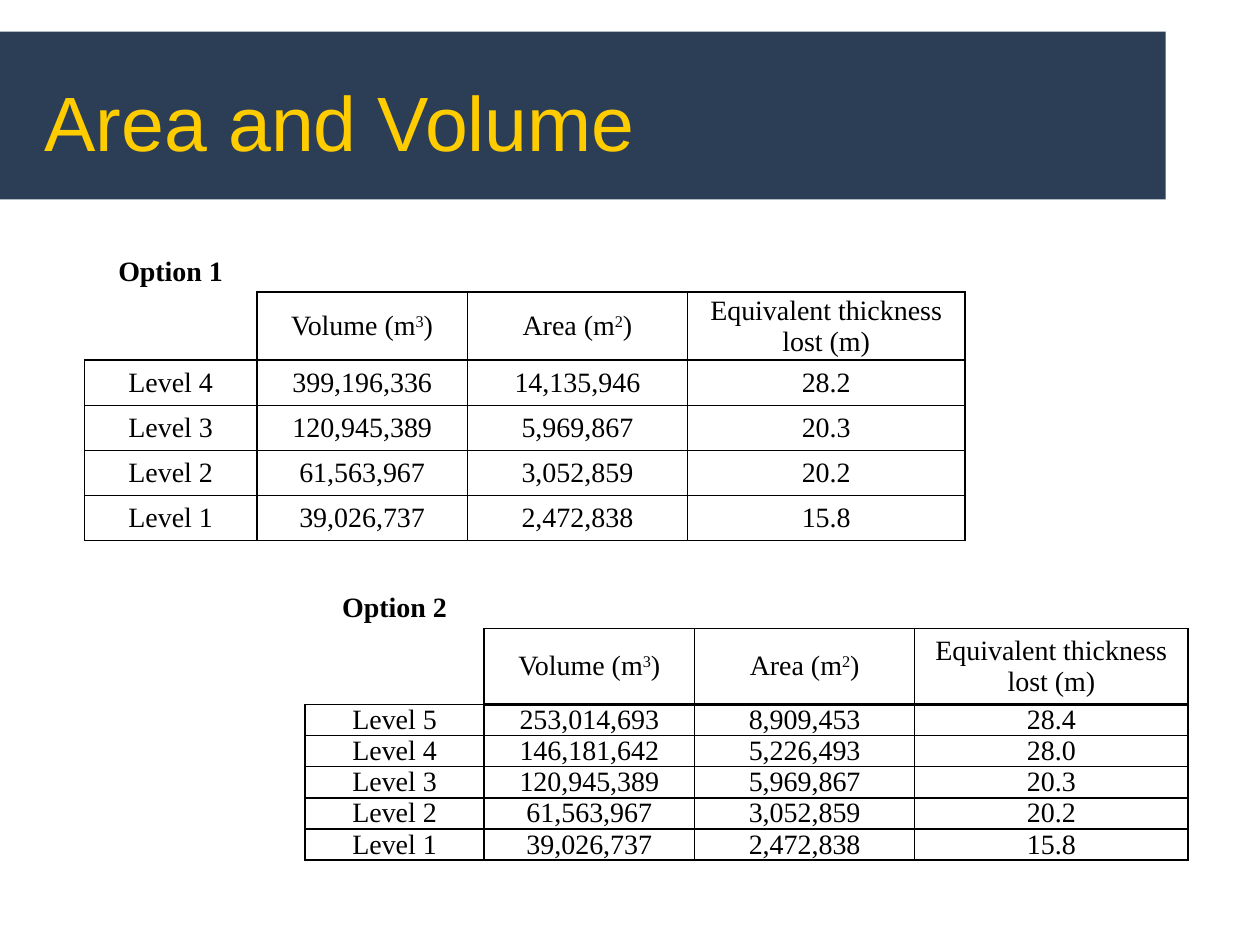
from itertools import accumulate

from lxml import etree
from pptx import Presentation
from pptx.dml.color import RGBColor
from pptx.enum.shapes import MSO_SHAPE
from pptx.enum.text import MSO_ANCHOR, PP_ALIGN
from pptx.oxml.ns import qn
from pptx.util import Cm, Pt

RECTANGLE = MSO_SHAPE.RECTANGLE
MIDDLE = MSO_ANCHOR.MIDDLE
LEFT, CENTER = PP_ALIGN.LEFT, PP_ALIGN.CENTER
TITLE_ONLY = 5

# Text between carets is set as superscript.
HEADERS = ["", "Volume (m^3^)", "Area (m^2^)", "Equivalent thickness lost (m)"]
OPTION_1 = [
    ["Level 4", "399,196,336", "14,135,946", "28.2"],
    ["Level 3", "120,945,389", "5,969,867", "20.3"],
    ["Level 2", "61,563,967", "3,052,859", "20.2"],
    ["Level 1", "39,026,737", "2,472,838", "15.8"],
]
OPTION_2 = [
    ["Level 5", "253,014,693", "8,909,453", "28.4"],
    ["Level 4", "146,181,642", "5,226,493", "28.0"],
] + OPTION_1[1:]


def color(value):
    return RGBColor.from_string(value)


def set_opacity(properties, percent):
    """Make the solid fill directly under a properties element translucent."""
    fill_color = properties.find(qn("a:solidFill"))[0]
    etree.SubElement(fill_color, qn("a:alpha"), val=str(percent * 1000))


class SlideBuilder:
    title_font, table_font = "Arial", "Times New Roman"
    title_size, table_size = Pt(44), Pt(16)
    banner_color, title_color = "0F243E", "FFCC00"
    text_color, cell_color = "000000", "FFFFFF"
    thin, thick = Pt(1), Pt(1.5)

    def __init__(self, presentation):
        self.slide = presentation.slides.add_slide(
            presentation.slide_layouts[TITLE_ONLY])

    def style_font(self, font, name, size, value):
        font.name, font.size = name, size
        font.color.rgb = color(value)

    def banner(self, left, top, width, height):
        shape = self.slide.shapes.add_shape(
            RECTANGLE, Cm(left), Cm(top), Cm(width), Cm(height))
        shape.shadow.inherit = False
        shape.fill.solid()
        shape.fill.fore_color.rgb = color(self.banner_color)
        set_opacity(shape._element.spPr, 88)
        shape.line.fill.background()
        # Behind the title: the first two children are group properties.
        self.slide.shapes._spTree.insert(2, shape._element)

    def title(self, text, left, top, width, height):
        shape = self.slide.shapes.title
        shape.left, shape.top = Cm(left), Cm(top)
        shape.width, shape.height = Cm(width), Cm(height)
        text_frame = shape.text_frame
        text_frame.text = text
        text_frame.vertical_anchor = MIDDLE
        paragraph = text_frame.paragraphs[0]
        paragraph.alignment = LEFT
        self.style_font(paragraph.runs[0].font, self.title_font,
                        self.title_size, self.title_color)

    def cell_text(self, cell, text, bold):
        paragraph = cell.text_frame.paragraphs[0]
        paragraph.alignment = CENTER
        for index, piece in enumerate(text.split("^")):
            if not piece:
                continue
            run = paragraph.add_run()
            run.text = piece
            self.style_font(run.font, self.table_font, self.table_size,
                            self.text_color)
            run.font.bold = bold
            if index % 2:
                run._r.get_or_add_rPr().set("baseline", "30000")

    def borders(self, cell, widths):
        """Draw the sides named in widths and clear the others."""
        properties = cell._tc.get_or_add_tcPr()
        for side in "LRTB":
            line = etree.SubElement(properties, qn(f"a:ln{side}"))
            if side in widths:
                line.set("w", str(widths[side]))
                fill = etree.SubElement(line, qn("a:solidFill"))
                etree.SubElement(fill, qn("a:srgbClr"), val=self.text_color)
            else:
                etree.SubElement(line, qn("a:noFill"))

    def border_widths(self, row, group, label_edge):
        """Label cells have open corners; the rule under the headers is thick."""
        if row == 0:
            return {"B": self.thin} if group else {}
        if row == 1 and group == 0:
            return {"R": self.thin, "B": self.thin}
        widths = dict.fromkeys("LRTB", self.thin)
        if group and row in (1, 2):
            widths["B" if row == 1 else "T"] = self.thick
        if row > 1 and group < 2:
            widths["L" if group else "R"] = label_edge
        return widths

    def table(self, name, values, left, top, columns, heights, top_spans,
              spans, inset, opacity, label_edge):
        rows = [[name] + [""] * (len(top_spans) - 1), HEADERS] + values
        table = self.slide.shapes.add_table(
            len(rows), len(columns), Cm(left), Cm(top),
            Cm(sum(columns)), Cm(sum(heights))).table
        table.first_row = table.horz_banding = False
        for column, width in zip(table.columns, columns):
            column.width = Cm(width)
        for row, height in zip(table.rows, heights):
            row.height = Cm(height)

        for row, texts in enumerate(rows):
            row_spans = spans if row else top_spans
            ends = accumulate(row_spans)
            for group, (text, span, end) in enumerate(
                    zip(texts, row_spans, ends)):
                cells = [table.cell(row, index)
                         for index in range(end - span, end)]
                if span > 1:
                    cells[0].merge(cells[-1])
                self.cell_text(cells[0], text, bold=row == 0)
                widths = self.border_widths(row, group, label_edge)
                for cell in cells:
                    cell.vertical_anchor = MIDDLE
                    cell.margin_left = cell.margin_right = Cm(inset)
                    cell.margin_top = cell.margin_bottom = 0
                    self.borders(cell, widths)
                    cell.fill.solid()
                    cell.fill.fore_color.rgb = color(self.cell_color)
                    set_opacity(cell._tc.tcPr, opacity)


def main():
    presentation = Presentation()
    presentation.slide_width, presentation.slide_height = Cm(25.4), Cm(19.05)
    builder = SlideBuilder(presentation)
    builder.banner(0, 0.64, 23.5, 3.38)
    builder.title("Area and Volume", 0.64, 0.84, 22.86, 3.18)
    builder.table(
        "Option 1", OPTION_1, 1.7, 5.08,
        columns=[3.48, 4.24, 1.75, 2.69, 3.99, 1.6],
        heights=[0.81, 1.37] + [0.91] * len(OPTION_1),
        top_spans=[1, 2, 1, 1, 1], spans=[1, 1, 2, 2],
        inset=0.1, opacity=86, label_edge=builder.thin)
    builder.table(
        "Option 2", OPTION_2, 6.15, 11.86,
        columns=[3.61, 4.24, 0.53, 3.35, 0.56, 2.79, 2.72],
        heights=[0.81, 1.53] + [0.62] * len(OPTION_2),
        top_spans=[1, 2, 1, 2, 1], spans=[1, 1, 3, 2],
        inset=0.08, opacity=80, label_edge=builder.thick)
    presentation.save("out.pptx")


if __name__ == "__main__":
    main()
